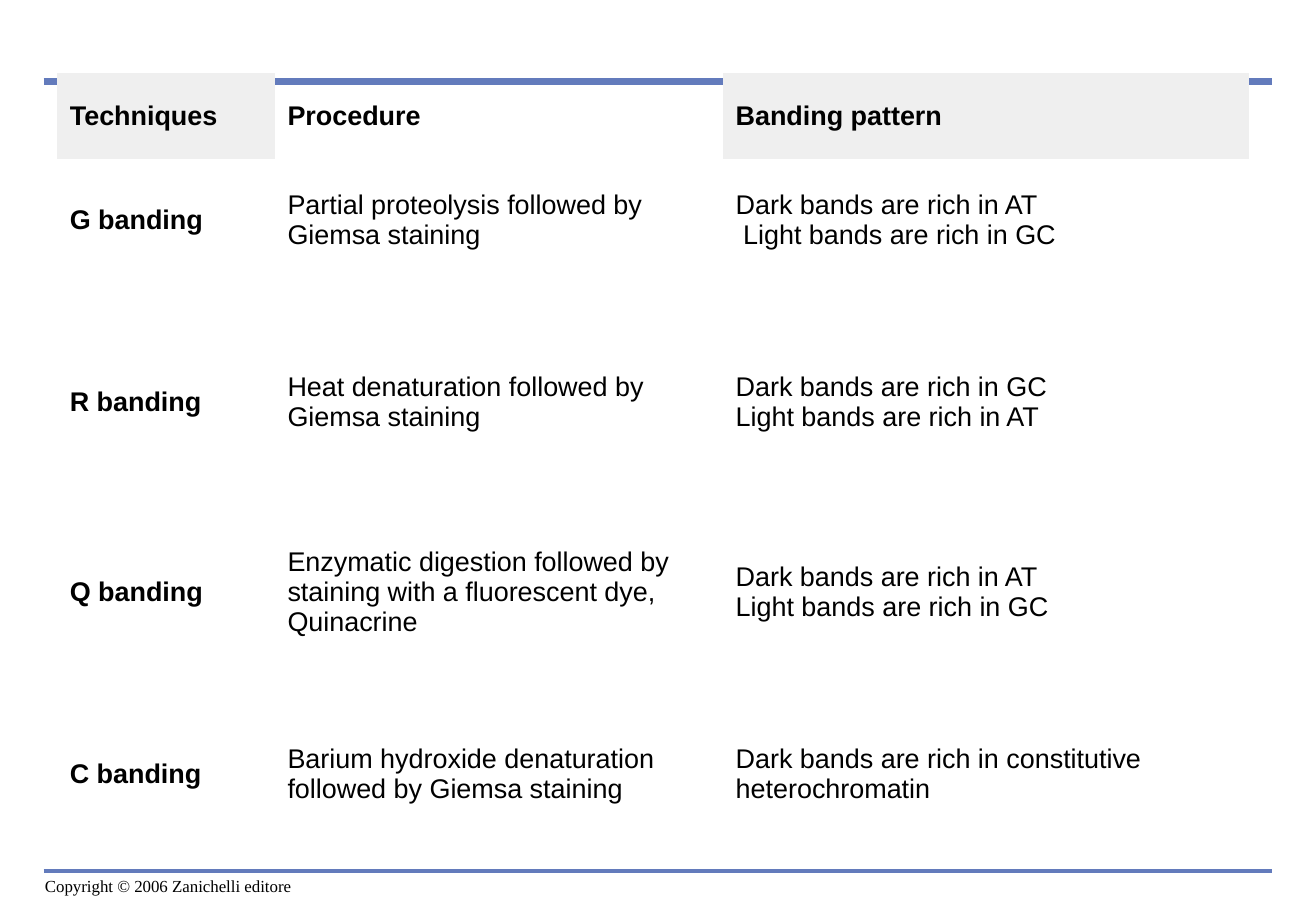
import pptx
import pptx.dml.color
import pptx.enum.shapes
import pptx.enum.text
import pptx.oxml
import pptx.oxml.ns
import pptx.util
from pptx.util import Cm

BLACK = pptx.dml.color.RGBColor(0x00, 0x00, 0x00)
RULE_BLUE = pptx.dml.color.RGBColor(0x63, 0x7B, 0xBC)
HEADER_GREY = pptx.dml.color.RGBColor(0xEF, 0xEF, 0xEF)

HEADER_FORMAT = {"name": "Arial", "size": pptx.util.Pt(16), "bold": True}
BODY_FORMAT = {"name": "Arial", "size": pptx.util.Pt(16), "bold": False}
COPYRIGHT_FORMAT = {"name": "Times New Roman", "size": pptx.util.Pt(10)}

HEADINGS = ["Techniques", "Procedure", "Banding pattern"]
BANDINGS = [
    ["G banding", "Partial proteolysis followed by Giemsa staining",
     "Dark bands are rich in AT\n Light bands are rich in GC"],
    ["R banding", "Heat denaturation followed by Giemsa staining",
     "Dark bands are rich in GC\nLight bands are rich in AT"],
    ["Q banding", "Enzymatic digestion followed by staining with a fluorescent dye, Quinacrine",
     "Dark bands are rich in AT\nLight bands are rich in GC"],
    ["C banding", "Barium hydroxide denaturation followed by Giemsa staining",
     "Dark bands are rich in constitutive heterochromatin"],
]
COLUMN_WIDTHS = [4.55, 9.37, 11.0]
HEADER_HEIGHT, BANDING_HEIGHT = 1.8, 2.57
SPACER_HEIGHTS = [1.24, 1.4, 1.24]


def write_text(text_frame, text, font_format):
    text_frame.text = text
    for paragraph in text_frame.paragraphs:
        for name, value in font_format.items():
            setattr(paragraph.font, name, value)
        paragraph.font.color.rgb = BLACK


def add_rule(slide, top, width):
    rule = slide.shapes.add_connector(
        pptx.enum.shapes.MSO_CONNECTOR.STRAIGHT, Cm(0.91), Cm(top), Cm(26.6), Cm(top))
    rule.line.color.rgb = RULE_BLUE
    rule.line.width = pptx.util.Pt(width)
    rule._element.spPr.append(pptx.oxml.parse_xml(
        f"<a:effectLst {pptx.oxml.ns.nsdecls('a')}/>"))


def add_copyright(slide):
    box = slide.shapes.add_textbox(Cm(0.69), Cm(18.16), Cm(12.78), Cm(0.69))
    box.text_frame.word_wrap = True
    box.text_frame.vertical_anchor = pptx.enum.text.MSO_ANCHOR.BOTTOM
    write_text(box.text_frame, "Copyright © 2006 Zanichelli editore", COPYRIGHT_FORMAT)


def clear_cell(cell):
    cell.fill.background()
    properties = cell._tc.get_or_add_tcPr()
    # Borders come before the fill
    for position, side in enumerate(("lnL", "lnR", "lnT", "lnB")):
        properties.insert(position, pptx.oxml.parse_xml(
            f"<a:{side} {pptx.oxml.ns.nsdecls('a')} w=\"0\"><a:noFill/></a:{side}>"))


def fill_cell(cell, text, font_format):
    cell.vertical_anchor = pptx.enum.text.MSO_ANCHOR.MIDDLE
    cell.margin_left = cell.margin_right = Cm(0.27)
    write_text(cell.text_frame, text, font_format)


def add_banding_table(slide):
    heights = [HEADER_HEIGHT, BANDING_HEIGHT]
    for spacer_height in SPACER_HEIGHTS:
        heights += [spacer_height, BANDING_HEIGHT]
    table = slide.shapes.add_table(
        len(heights), len(COLUMN_WIDTHS), Cm(1.19), Cm(1.52),
        Cm(sum(COLUMN_WIDTHS)), Cm(sum(heights))).table
    table.first_row = table.horz_banding = False
    for column, width in zip(table.columns, COLUMN_WIDTHS):
        column.width = Cm(width)
    for row, height in zip(table.rows, heights):
        row.height = Cm(height)
    for cell in table.iter_cells():
        clear_cell(cell)

    # Header row, shaded at both ends
    for column, heading in enumerate(HEADINGS):
        cell = table.cell(0, column)
        fill_cell(cell, heading, HEADER_FORMAT)
        if column != 1:
            cell.fill.solid()
            cell.fill.fore_color.rgb = HEADER_GREY

    # Techniques, with a spacer row between them
    for index, banding in enumerate(BANDINGS):
        for column, text in enumerate(banding):
            font_format = BODY_FORMAT if column else HEADER_FORMAT
            fill_cell(table.cell(1 + 2 * index, column), text, font_format)


def main():
    presentation = pptx.Presentation()
    presentation.slide_width = Cm(27.51)
    presentation.slide_height = Cm(19.05)
    slide = presentation.slides.add_slide(presentation.slide_layouts[6])

    # Page frame
    add_copyright(slide)
    add_rule(slide, 18.21, 2)
    add_rule(slide, 1.7, 4)

    # Content
    add_banding_table(slide)
    presentation.save("out.pptx")


if __name__ == "__main__":
    main()
